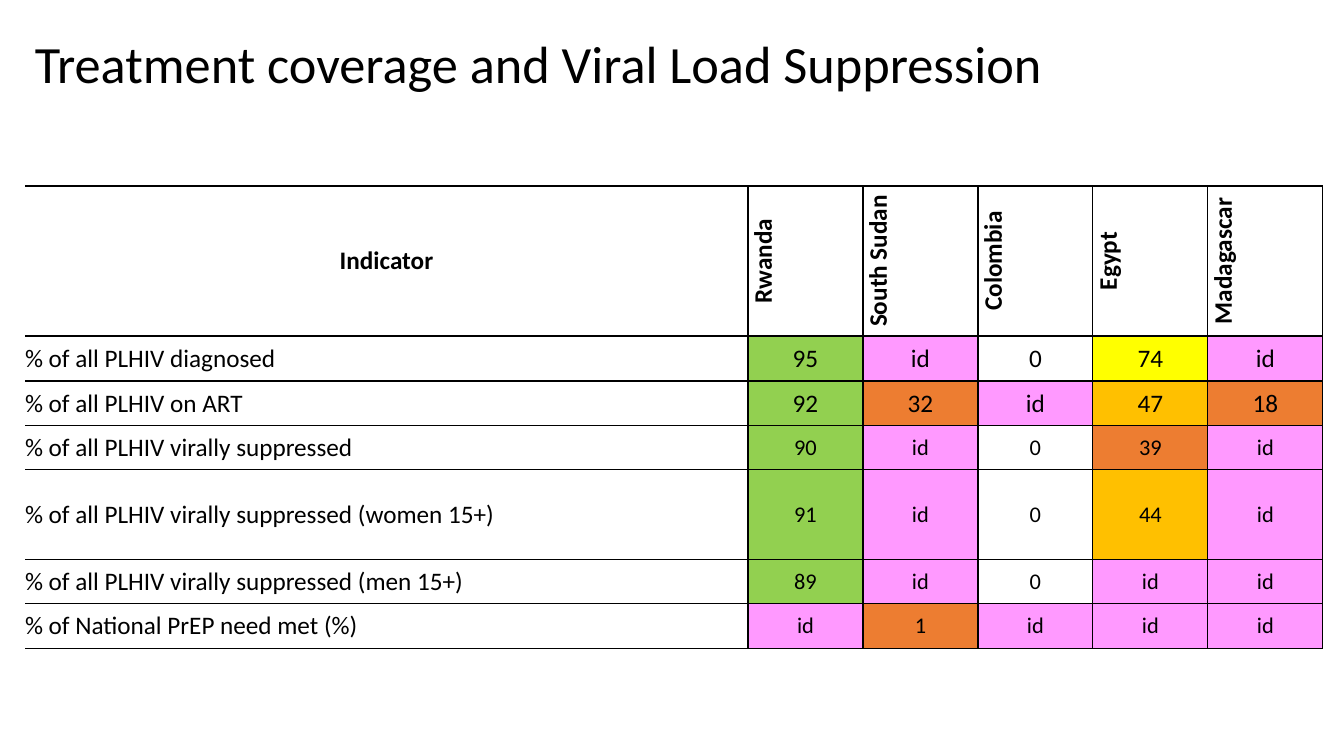
from lxml import etree
from pptx import Presentation
from pptx import util as u
from pptx.dml.color import RGBColor
from pptx.enum import text
from pptx.oxml.ns import qn

TITLE = "Treatment coverage and Viral Load Suppression"
HEAD = ["Indicator", "Rwanda", "South Sudan", "Colombia", "Egypt", "Madagascar"]
ROWS = [
    ("% of all PLHIV diagnosed", 18, ["95", "id", "0", "74", "id"]),
    ("% of all PLHIV on ART", 18, ["92", "32", "id", "47", "18"]),
    ("% of all PLHIV virally suppressed", 16, ["90", "id", "0", "39", "id"]),
    ("% of all PLHIV virally suppressed (women 15+)", 16, ["91", "id", "0", "44", "id"]),
    ("% of all PLHIV virally suppressed (men 15+)", 16, ["89", "id", "0", "id", "id"]),
    ("% of National PrEP need met (%)", 16, ["id", "1", "id", "id", "id"]),
]
COLORS = {"ink": "000000", "nodata": "FF99FF", "high": "92D050",
          "good": "FFFF00", "fair": "FFC000", "low": "ED7D31"}
BANDS = [(85, "high"), (60, "good"), (40, "fair"), (1, "low")]
WIDTHS = [723] + [115] * 5
HEIGHTS = [150, 45, 45, 44, 90, 44, 45]
FONT = "Calibri"


def px(n):
    return u.Emu(round(n * 914400 / 100.8))


def shade(value):
    if value == "id":
        return COLORS["nodata"]
    for floor, name in BANDS:
        if int(value) >= floor:
            return COLORS[name]
    return None


def write(para, words, size, bold=False):
    run = para.add_run()
    run.text = words
    run.font.name = FONT
    run.font.size = u.Pt(size)
    run.font.bold = bold
    run.font.color.rgb = RGBColor.from_string(COLORS["ink"])


def border(cell, first):
    props = cell._tc.get_or_add_tcPr()
    for side in "LRTB":
        line = etree.SubElement(props, qn("a:ln" + side), w=str(u.Pt(1)))
        if side == "L" and first:
            etree.SubElement(line, qn("a:noFill"))
        else:
            fill = etree.SubElement(line, qn("a:solidFill"))
            etree.SubElement(fill, qn("a:srgbClr"), val=COLORS["ink"])


def put(cell, words, size, first=False, bold=False, color=None, center=True):
    cell.margin_left = cell.margin_right = cell.margin_top = cell.margin_bottom = 0
    cell.vertical_anchor = text.MSO_ANCHOR.MIDDLE
    border(cell, first)
    if color:
        cell.fill.solid()
        cell.fill.fore_color.rgb = RGBColor.from_string(color)
    else:
        cell.fill.background()
    para = cell.text_frame.paragraphs[0]
    para.alignment = text.PP_ALIGN.CENTER if center else text.PP_ALIGN.LEFT
    write(para, words, size, bold)


def main():
    deck = Presentation()
    deck.slide_width, deck.slide_height = px(1344), px(756)
    slide = deck.slides.add_slide(deck.slide_layouts[6])

    frame = slide.shapes.add_table(len(HEIGHTS), len(WIDTHS), px(25), px(186),
                                   px(sum(WIDTHS)), px(sum(HEIGHTS)))
    table = frame.table
    table.first_row = table.horz_banding = False
    for col, width in zip(table.columns, WIDTHS):
        col.width = px(width)
    for row, height in zip(table.rows, HEIGHTS):
        row.height = px(height)

    for c, name in enumerate(HEAD):
        cell = table.cell(0, c)
        put(cell, name, 18, first=c == 0, bold=True)
        if c:
            cell._tc.get_or_add_tcPr().set("vert", "vert270")
    for r, (label, size, values) in enumerate(ROWS, 1):
        put(table.cell(r, 0), label, 18, first=True, center=False)
        for c, value in enumerate(values, 1):
            put(table.cell(r, c), value, size, color=shade(value))

    title = slide.shapes.add_textbox(px(25), px(38), px(1073), px(100)).text_frame
    title.word_wrap = True
    para = title.paragraphs[0]
    para.line_spacing = 0.8
    write(para, TITLE, 37.4)

    deck.save("out.pptx")


if __name__ == "__main__":
    main()
